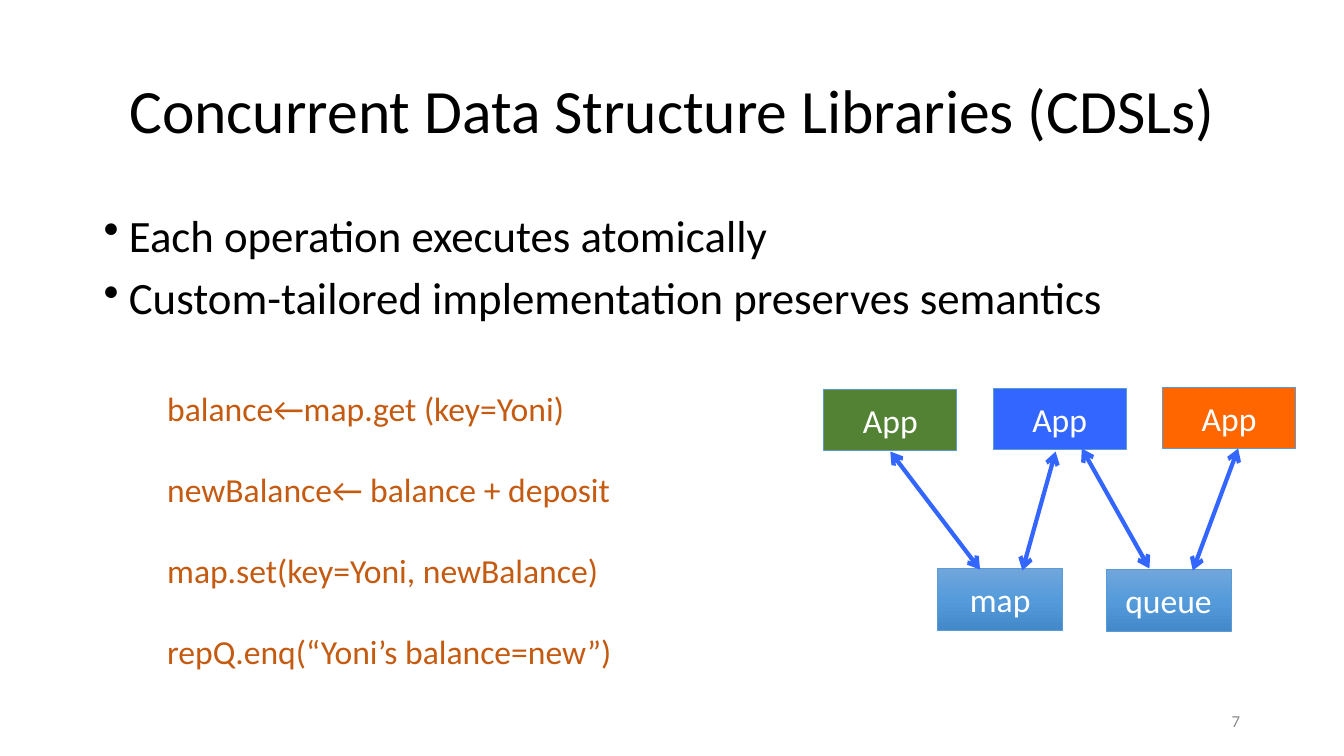
import copy

import pptx
import pptx.dml.color
import pptx.enum.shapes
import pptx.enum.text
import pptx.oxml.ns
import pptx.oxml.xmlchemy
import pptx.util
from lxml import etree

PX = 9144
FONT = "Calibri"
BLACK, WHITE, GREY, BROWN = "000000", "FFFFFF", "8C8C8C", "C55A11"
BLUE, EDGE = "3366FF", "5B9BD5"
STRUCTURE_STOPS = [(0, "71A6DB"), (0.5, "559BDB"), (1, "448ACA")]
APPS = [(817, 386, "548235"), (985, 385, BLUE), (1153, 384, "FF6600")]
STRUCTURES = [(930, 564, "map"), (1097, 565, "queue")]
LINKS = [
    (883, 448, 972, 565),
    (1047, 448, 1014, 566),
    (1228, 445, 1183, 566),
    (1073, 445, 1140, 564),
]
POINTS = [
    "Each operation executes atomically",
    "Custom-tailored implementation preserves semantics",
]
CODE = [
    "balance←map.get (key=Yoni)",
    "newBalance← balance + deposit",
    "map.set(key=Yoni, newBalance)",
    "repQ.enq(“Yoni’s balance=new”)",
]
ALIGN = pptx.enum.text.PP_ALIGN
ANCHOR = pptx.enum.text.MSO_ANCHOR


def px(*lengths):
    return [length * PX for length in lengths]


def color(value):
    return pptx.dml.color.RGBColor.from_string(value)


def apply(target, values):
    for name, value in values.items():
        setattr(target, name, value)


def write(shape, lines, size, ink, anchor=ANCHOR.TOP, indent=None, bullet=None, **layout):
    frame = shape.text_frame
    apply(frame, {
        "word_wrap": True,
        "auto_size": pptx.enum.text.MSO_AUTO_SIZE.NONE,
        "vertical_anchor": anchor,
    })
    for index, line in enumerate(lines):
        para = frame.add_paragraph() if index else frame.paragraphs[0]
        apply(para, layout)
        span = para.add_run()
        span.text = line
        apply(span.font, {"name": FONT, "size": pptx.util.Pt(size)})
        span.font.color.rgb = color(ink)
        if indent:
            properties = para._p.get_or_add_pPr()
            properties.set("marL", str(indent * PX))
            if bullet:
                properties.set("indent", str(-indent * PX))
                mark = etree.SubElement(properties, pptx.oxml.ns.qn("a:buChar"))
                mark.set("char", bullet)


def add_title(page, text):
    title = page.shapes.title
    apply(title, dict(zip(("left", "top", "width", "height"), px(92, 40, 1150, 145))))
    write(title, [text], 44, BLACK, ANCHOR.MIDDLE,
          alignment=ALIGN.CENTER, line_spacing=0.9)


def add_text(page, place, lines, size, ink, **layout):
    box = page.shapes.add_textbox(*px(*place))
    write(box, lines, size, ink, **layout)


def add_box(page, place, label):
    box = page.shapes.add_shape(pptx.enum.shapes.MSO_SHAPE.RECTANGLE, *px(*place))
    box.shadow.inherit = False
    box.line.color.rgb = color(EDGE)
    box.line.width = pptx.util.Pt(0.5)
    write(box, [label], 24, WHITE, ANCHOR.MIDDLE, alignment=ALIGN.CENTER)
    return box


def add_app(page, left, top, fill):
    box = add_box(page, (left, top, 132, 61), "App")
    box.fill.solid()
    box.fill.fore_color.rgb = color(fill)


def add_structure(page, left, top, label):
    box = add_box(page, (left, top, 124, 61), label)
    box.fill.gradient()
    box.fill.gradient_angle = 270
    stop_list = box._element.spPr.find(".//" + pptx.oxml.ns.qn("a:gsLst"))
    stop_list.append(copy.deepcopy(stop_list[0]))
    for stop, (position, tint) in zip(box.fill.gradient_stops, STRUCTURE_STOPS):
        stop.position = position
        stop.color.rgb = color(tint)


def add_link(page, *ends):
    link = page.shapes.add_connector(
        pptx.enum.shapes.MSO_CONNECTOR.STRAIGHT, *px(*ends))
    link.line.color.rgb = color(BLUE)
    link.line.width = pptx.util.Pt(3)
    outline = link.line._get_or_add_ln()
    for end in ("a:headEnd", "a:tailEnd"):
        etree.SubElement(outline, pptx.oxml.ns.qn(end)).set("type", "arrow")
    etree.SubElement(link._element.spPr, pptx.oxml.ns.qn("a:effectLst"))


def main():
    deck = pptx.Presentation()
    deck.slide_width, deck.slide_height = px(1333, 750)
    page = deck.slides.add_slide(deck.slide_layouts[5])
    add_title(page, "Concurrent Data Structure Libraries (CDSLs)")
    add_text(page, (93, 207, 1150, 130), POINTS, 32, BLACK, indent=25, bullet="•",
             line_spacing=0.9, space_before=pptx.util.Pt(10))
    add_text(page, (940, 695, 300, 40), ["7"], 12, GREY,
             anchor=ANCHOR.MIDDLE, alignment=ALIGN.RIGHT)
    add_text(page, (106, 380, 532, 293), CODE, 24, BROWN, indent=50,
             space_after=pptx.util.Pt(29))
    for structure in STRUCTURES:
        add_structure(page, *structure)
    for app in APPS:
        add_app(page, *app)
    for link in LINKS:
        add_link(page, *link)
    deck.save("out.pptx")


if __name__ == "__main__":
    main()
